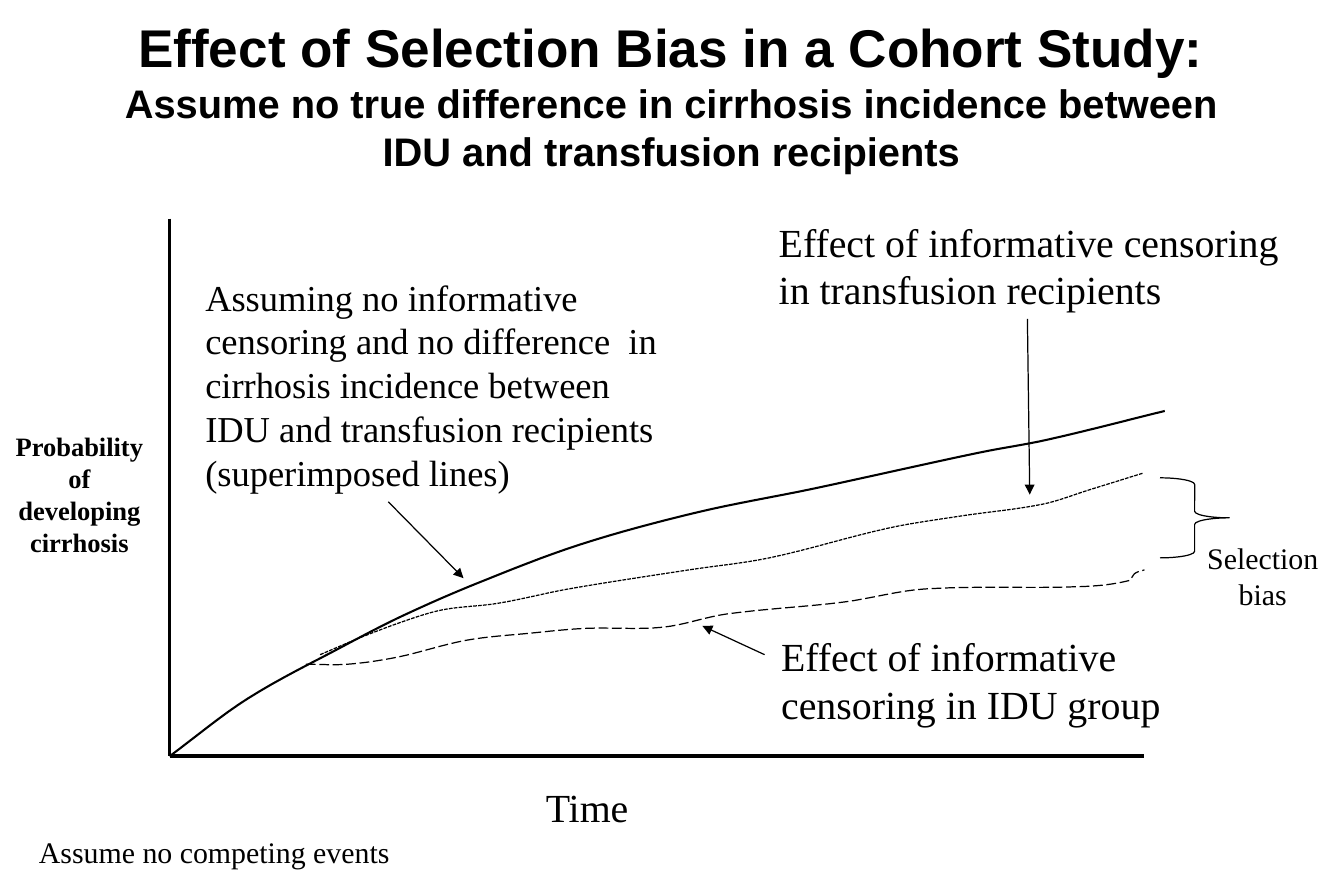
from itertools import pairwise
from pptx import Presentation
from pptx.dml.color import RGBColor as RGB
from pptx.enum.dml import MSO_LINE as Dash
from pptx.enum.shapes import MSO_CONNECTOR as Link, MSO_SHAPE as Form
from pptx.enum.text import MSO_ANCHOR as Anchor, MSO_AUTO_SIZE as Fit, PP_ALIGN as Align
from pptx.oxml.ns import qn
from pptx.oxml.xmlchemy import OxmlElement as Node
from pptx.util import Emu, Pt

SCALE = 9144
WIDTH, HEIGHT = 1125, 750
BLACK = "000000"
WHITE = "FFFFFF"
SANS = "Arial"
SERIF = "Times New Roman"

ORIGIN = (142, 633)
TOP = (142, 183)
RIGHT = (958, 633)

TRUE = [ORIGIN, (207, 585), (289, 540), (338, 515), (400, 488), (485, 456),
        (583, 429), (681, 409), (819, 379), (877, 368), (975, 344)]
BLOOD = [(268, 548), (306, 532), (347, 517), (373, 510), (417, 505), (476, 493),
         (577, 477), (644, 467), (744, 442), (804, 432), (873, 422), (912, 410),
         (957, 396)]
IDU = [(256, 556), (291, 556), (333, 550), (390, 536), (444, 530), (490, 526),
       (555, 525), (608, 514), (706, 504), (774, 493), (906, 491), (945, 486),
       (950, 480), (958, 477)]
CURVES = [(TRUE, 1.25, None), (IDU, 0.75, Dash.LONG_DASH),
          (BLOOD, 0.75, Dash.SQUARE_DOT)]

ARROWS = {
    "true": ((325, 420), (388, 484)),
    "idu": ((640, 548), (588, 524)),
    "blood": ((860, 267), (862, 414)),
}

NOTES = [
    ("Assuming no informative censoring and no difference  in cirrhosis "
     "incidence between IDU and transfusion recipients (superimposed lines)",
     (162, 225, 408, 195), 22, Align.LEFT),
    ("Effect of informative censoring in IDU group",
     (644, 524, 375, 90), 24, Align.LEFT),
    ("Effect of informative censoring in transfusion recipients",
     (642, 177, 442, 90), 24, Align.LEFT),
    ("Time", (383, 650, 217, 50), 24, Align.CENTER),
    ("Selection bias", (988, 447, 138, 70), 18, Align.CENTER),
    ("Assume no competing events", (-4, 693, 367, 40), 18, Align.CENTER),
]


def px(n):
    return Emu(round(n * SCALE))


def paint(code):
    return RGB.from_string(code)


def apply(thing, look):
    for key, val in look.items():
        setattr(thing, key, val)


def ink(line, width, dash=None):
    line.color.rgb = paint(BLACK)
    apply(line, {"width": Pt(width), "dash_style": dash})


def write(para, text, size, name=SERIF, bold=False, align=Align.CENTER):
    para.alignment = align
    run = para.add_run()
    run.text = text
    apply(run.font, {"name": name, "size": Pt(size), "bold": bold})
    run.font.color.rgb = paint(BLACK)


def head(slide, main, sub):
    title = slide.shapes.title
    apply(title, {"left": px(84), "top": px(50), "width": px(956), "height": px(58)})
    frame = title.text_frame
    apply(frame, {"word_wrap": True, "auto_size": Fit.NONE,
                  "vertical_anchor": Anchor.MIDDLE})
    para = frame.paragraphs[0]
    write(para, main, 32, SANS, True)
    para.add_line_break()
    write(para, sub, 24, SANS, True)


def note(slide, text, box, size, align):
    frame = slide.shapes.add_textbox(*map(px, box)).text_frame
    apply(frame, {"word_wrap": True, "auto_size": Fit.SHAPE_TO_FIT_TEXT})
    write(frame.paragraphs[0], text, size, align=align)


def block(slide, form, box):
    shape = slide.shapes.add_shape(form, *map(px, box))
    shape.shadow.inherit = False
    shape.fill.solid()
    shape.fill.fore_color.rgb = paint(WHITE)
    return shape


def label(slide, text, box):
    shape = block(slide, Form.RECTANGLE, box)
    shape.line.fill.background()
    frame = shape.text_frame
    apply(frame, {"word_wrap": True, "vertical_anchor": Anchor.MIDDLE})
    write(frame.paragraphs[0], text, 16, bold=True)


def brace(slide, box):
    shape = block(slide, Form.RIGHT_BRACE, box)
    shape.adjustments[0] = 0.095
    ink(shape.line, 0.75)


def rule(slide, start, end, width):
    link = slide.shapes.add_connector(Link.STRAIGHT, *map(px, start + end))
    ink(link.line, width)
    link._element.spPr.append(Node("a:effectLst"))
    return link


def arrow(slide, start, end):
    link = rule(slide, start, end, 0.75)
    tip = Node("a:tailEnd")
    tip.set("type", "triangle")
    link._element.spPr.find(qn("a:ln")).append(tip)


def slope(start, end):
    return (end[1] - start[1]) / (end[0] - start[0])


def smooth(knots, steps=8):
    befores = knots[:1] + knots[:-1]
    afters = knots[1:] + knots[-1:]
    slopes = [slope(a, b) for a, b in zip(befores, afters)]
    points = [knots[0]]
    for (start, lean), (end, next_lean) in pairwise(zip(knots, slopes)):
        (x, y), (end_x, end_y) = start, end
        span = end_x - x
        for step in range(1, steps + 1):
            t = step / steps
            u = 1 - t
            ctrl = y + lean * span / 3
            next_ctrl = end_y - next_lean * span / 3
            points.append((x + t * span, u**3 * y + 3 * u * u * t * ctrl
                           + 3 * u * t * t * next_ctrl + t**3 * end_y))
    return points


def curve(slide, knots, width, dash):
    first, *rest = [(px(x), px(y)) for x, y in smooth(knots)]
    pen = slide.shapes.build_freeform(*first)
    pen.add_line_segments(rest, close=False)
    shape = pen.convert_to_shape()
    shape.shadow.inherit = False
    shape.fill.background()
    ink(shape.line, width, dash)


def main():
    deck = Presentation()
    apply(deck, {"slide_width": px(WIDTH), "slide_height": px(HEIGHT)})
    slide = deck.slides.add_slide(deck.slide_layouts[5])
    head(slide, "Effect of Selection Bias in a Cohort Study:",
         "Assume no true difference in cirrhosis incidence between "
         "IDU and transfusion recipients")
    rule(slide, TOP, ORIGIN, 2.25)
    rule(slide, ORIGIN, RIGHT, 2.5)
    label(slide, "Probability of developing cirrhosis", (0, 350, 133, 127))
    for knots, width, dash in CURVES:
        curve(slide, knots, width, dash)
    for start, end in ARROWS.values():
        arrow(slide, start, end)
    brace(slide, (971, 400, 58, 67))
    for text, box, size, align in NOTES:
        note(slide, text, box, size, align)
    deck.save("out.pptx")


if __name__ == "__main__":
    main()
